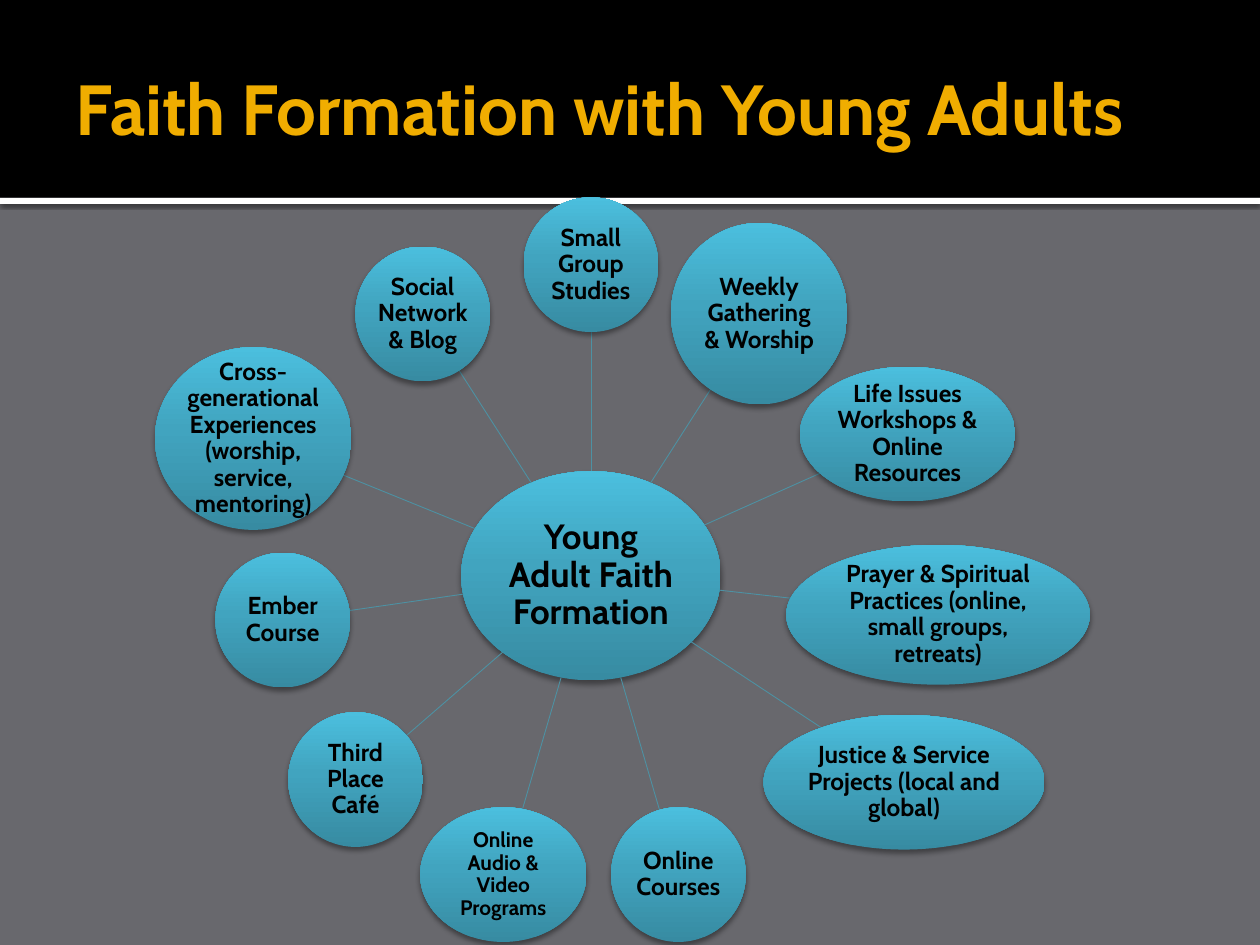
from copy import deepcopy
from dataclasses import dataclass
from math import hypot
from typing import NamedTuple

from lxml.etree import SubElement
from pptx import Presentation
from pptx.dml.color import RGBColor
from pptx.enum.shapes import MSO_CONNECTOR, MSO_SHAPE
from pptx.enum.text import MSO_ANCHOR, MSO_AUTO_SIZE, PP_ALIGN
from pptx.oxml.ns import qn
from pptx.util import Pt


@dataclass(frozen=True)
class Theme:
    font: str = "Cabin"
    background: str = "68686D"
    band: str = "000000"
    rule: str = "FFFFFF"
    title: str = "F0AD00"
    text: str = "000000"
    shadow: str = "000000"
    spoke: str = "4D91A3"
    gradient: tuple = ((0, "378BA2"), (0.55, "41A4BF"), (1, "4BBFDE"))
    title_size: float = 40.5
    hub_size: float = 20
    node_size: float = 14
    small_size: float = 12


THEME = Theme()


class Box(NamedTuple):
    left: float
    top: float
    width: float
    height: float


class Bubble(NamedTuple):
    text: str
    x: float
    y: float
    width: float = 77
    height: float = 77
    size: float = THEME.node_size


HUB = Bubble("Young Adult Faith Formation", 249.7, 216, 148.3, 119.5, THEME.hub_size)
NODES = (
    Bubble("Small Group Studies", 249.7, 38.3),
    Bubble("Weekly Gathering & Worship", 345.8, 66.3, 100.8, 103.7),
    Bubble("Life Issues Workshops & Online Resources", 430.6, 135.1, 123.1),
    Bubble("Prayer & Spiritual Practices (online, small groups, retreats)", 448, 238.3, 173.5, 79.9),
    Bubble("Justice & Service Projects (local and global)", 428.6, 334, 160.6),
    Bubble("Online Courses", 299.7, 386.8),
    Bubble("Online Audio & Video Programs", 199.6, 386.8, 95, size=THEME.small_size),
    Bubble("Third Place Café", 115.2, 332.5),
    Bubble("Ember Course", 73.6, 241.4),
    Bubble("Cross-generational Experiences (worship, service, mentoring)", 56.7, 137.6, 112.3, 104.4),
    Bubble("Social Network & Blog", 153.6, 66.4),
)


def color(value):
    return RGBColor.from_string(value)


def add_plain_shape(slide, kind, box):
    shape = slide.shapes.add_shape(kind, *map(Pt, box))
    shape.line.fill.background()
    shape.shadow.inherit = False
    return shape


def add_shadow(shape, blur, distance, opacity):
    effects = shape.element.spPr.find(qn("a:effectLst"))
    shadow = SubElement(effects, qn("a:outerShdw"), blurRad=str(Pt(blur)),
                        dist=str(Pt(distance)), dir="5400000", rotWithShape="0")
    shade = SubElement(shadow, qn("a:srgbClr"), val=THEME.shadow)
    SubElement(shade, qn("a:alpha"), val=str(opacity * 1000))


def fill_gradient(shape):
    shape.fill.gradient()
    shape.fill.gradient_angle = 90
    stops = shape.element.spPr.find(qn("a:gradFill")).find(qn("a:gsLst"))
    stops.append(deepcopy(stops[-1]))
    for stop, (position, value) in zip(shape.fill.gradient_stops, THEME.gradient):
        stop.position = position
        stop.color.rgb = color(value)


def format_text(frame, text, size, value, insets):
    frame.text = text
    frame.word_wrap = True
    frame.auto_size = MSO_AUTO_SIZE.NONE
    frame.vertical_anchor = MSO_ANCHOR.MIDDLE
    frame.margin_left, frame.margin_top, frame.margin_right, frame.margin_bottom = map(Pt, insets)
    paragraph = frame.paragraphs[0]
    font = paragraph.font
    font.name, font.size, font.bold = THEME.font, Pt(size), True
    font.color.rgb = color(value)
    return paragraph


def add_header(slide, box):
    rule = add_plain_shape(slide, MSO_SHAPE.RECTANGLE, Box(box.left, box.top + box.height, box.width, 3.6))
    rule.fill.solid()
    rule.fill.fore_color.rgb = color(THEME.rule)
    add_shadow(rule, 2.5, 0.8, 60)
    band = add_plain_shape(slide, MSO_SHAPE.RECTANGLE, box)
    band.fill.solid()
    band.fill.fore_color.rgb = color(THEME.band)

    title = slide.shapes.title
    title.left, title.top = Pt(box.left + 36), Pt(box.top + 12.2)
    title.width, title.height = Pt(box.width - 72), Pt(98.6)
    paragraph = format_text(title.text_frame, "Faith Formation with Young Adults",
                            THEME.title_size, THEME.title, (7.2, 3.6, 3.6, 3.6))
    paragraph.alignment = PP_ALIGN.LEFT
    title.element.getparent().append(title.element)


def add_bubble(slide, box, bubble):
    shape = add_plain_shape(slide, MSO_SHAPE.OVAL, Box(
        box.left + bubble.x - bubble.width / 2, box.top + bubble.y - bubble.height / 2,
        bubble.width, bubble.height))
    fill_gradient(shape)
    add_shadow(shape, 3.1, 2, 38)
    paragraph = format_text(shape.text_frame, bubble.text, bubble.size, THEME.text, (0.7,) * 4)
    paragraph.alignment = PP_ALIGN.CENTER
    paragraph.line_spacing = 0.9


def edge_point(bubble, target):
    across, down = target.x - bubble.x, target.y - bubble.y
    share = 1 / hypot(across / (bubble.width / 2), down / (bubble.height / 2))
    return bubble.x + share * across, bubble.y + share * down


def add_spoke(slide, box, hub, node):
    ends = (*edge_point(hub, node), *edge_point(node, hub))
    offsets = (box.left, box.top) * 2
    spoke = slide.shapes.add_connector(
        MSO_CONNECTOR.STRAIGHT, *(Pt(end + offset) for end, offset in zip(ends, offsets)))
    spoke.line.color.rgb = color(THEME.spoke)
    spoke.line.width = Pt(0.5)
    SubElement(spoke.element.spPr, qn("a:effectLst"))


def add_wheel(slide, box):
    add_bubble(slide, box, HUB)
    for node in NODES:
        add_spoke(slide, box, HUB, node)
        add_bubble(slide, box, node)


def main():
    presentation = Presentation()
    presentation.slide_width, presentation.slide_height = Pt(720), Pt(540)
    slide = presentation.slides.add_slide(presentation.slide_layouts.get_by_name("Title Only"))
    slide.background.fill.solid()
    slide.background.fill.fore_color.rgb = color(THEME.background)
    add_header(slide, Box(0, 0, 720, 113))
    add_wheel(slide, Box(88, 113, 535, 426))
    presentation.save("out.pptx")


if __name__ == "__main__":
    main()
